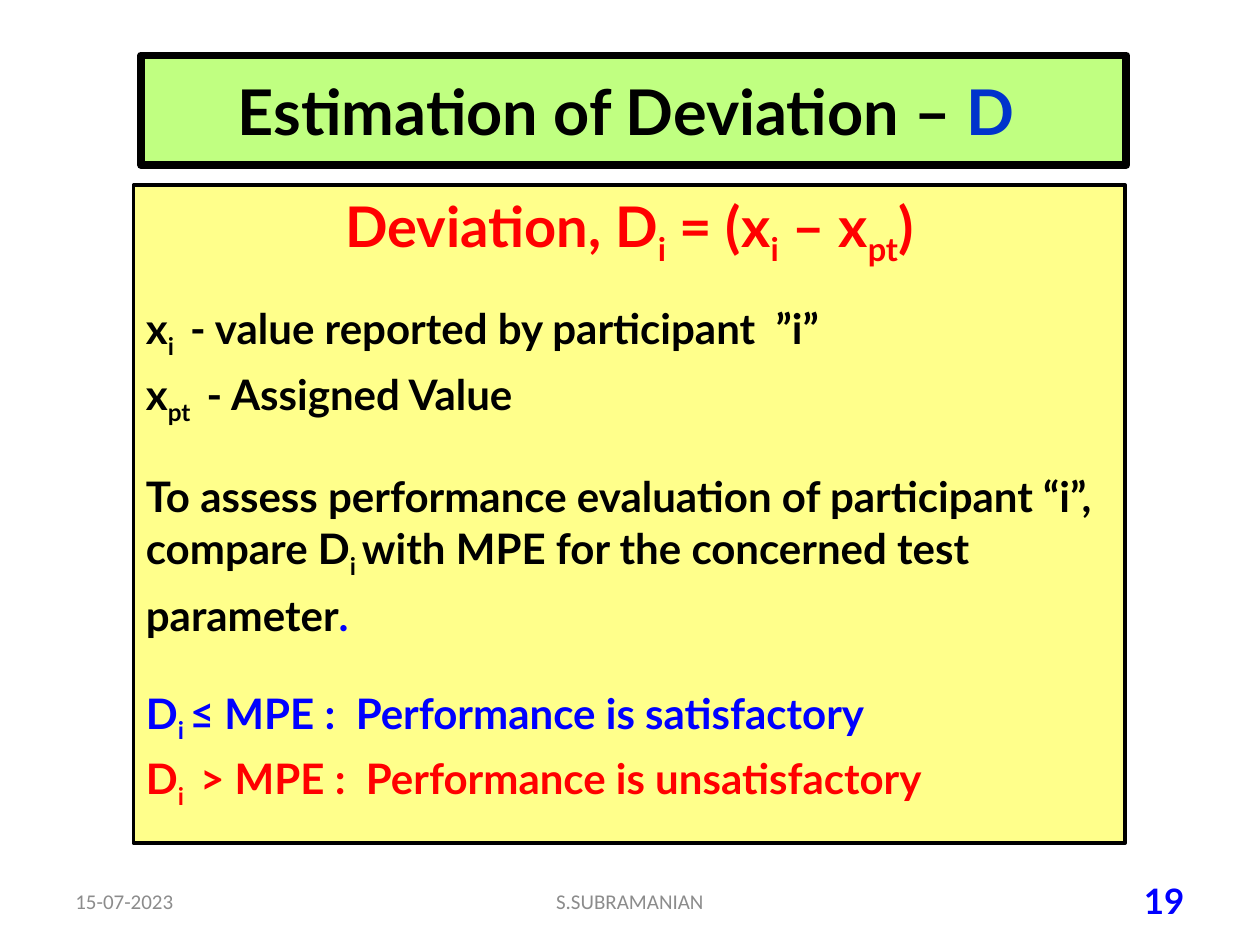
from pptx import Presentation
from pptx import util as u
from pptx.dml.color import RGBColor
from pptx.enum import shapes, text

HUES = {"ink": "000000", "lime": "C0FF81", "cream": "FFFF8B", "navy": "0033CC",
        "blue": "0000FF", "red": "FF0000", "grey": "8C8C8C"}
BOLD = {"name": "Lato", "bold": True}
SMALL = {"name": "Calibri", "bold": False, "size": u.Pt(12)}
LEFT, MID, RIGHT = text.PP_ALIGN.LEFT, text.PP_ALIGN.CENTER, text.PP_ALIGN.RIGHT


def hue(key):
    """Return the named colour."""
    return RGBColor.from_string(HUES[key])


def apply(item, form):
    """Set each attribute in form on item."""
    for key, value in form.items():
        setattr(item, key, value)


def place(shape, box):
    """Move and size a shape to a box in inches."""
    apply(shape, dict(zip(("left", "top", "width", "height"), map(u.Inches, box))))


def paint(shape, fill, width):
    """Give a shape a solid fill and a black outline."""
    shape.fill.solid()
    shape.fill.fore_color.rgb = hue(fill)
    shape.line.color.rgb = hue("ink")
    shape.line.width = u.Pt(width)


def write(par, parts, form):
    """Add runs of (words, colour, lowered) to a paragraph."""
    for words, tint, low in parts:
        run = par.add_run()
        run.text = words
        apply(run.font, form)
        run.font.color.rgb = hue(tint)
        if low:
            run.font._element.set("baseline", "-25000")


def mix(tint, *words):
    """Alternate normal and lowered words in one colour."""
    return [(word, tint, i % 2 == 1) for i, word in enumerate(words)]


def head(slide, box):
    """Place the framed title."""
    title = slide.shapes.title
    place(title, box)
    paint(title, "lime", 4.5)
    frame = title.text_frame
    apply(frame, {"vertical_anchor": text.MSO_ANCHOR.MIDDLE, "word_wrap": True,
                  "auto_size": text.MSO_AUTO_SIZE.NONE})
    par = frame.paragraphs[0]
    par.alignment = MID
    write(par, [("Estimation of Deviation – ", "ink", False), ("D ", "navy", False)],
          {**BOLD, "size": u.Pt(36)})


def body(slide, box):
    """Place the panel with the formula, its terms and the verdicts."""
    panel = slide.shapes.add_shape(shapes.MSO_SHAPE.RECTANGLE, *map(u.Inches, box))
    panel.shadow.inherit = False
    paint(panel, "cream", 2.25)
    frame = panel.text_frame
    apply(frame, {"vertical_anchor": text.MSO_ANCHOR.TOP, "word_wrap": True})
    rows = [
        (32, 0, MID, mix("red", "Deviation, D", "i", " = (x", "i", " – x", "pt", ")")),
        (24, 20, LEFT, mix("ink", "x", "i ", " - value reported by participant  ”i”")),
        (24, 4.8, LEFT, mix("ink", "x", "pt ", " - Assigned Value")),
        (24, 20, LEFT, mix(
            "ink", "To assess performance evaluation of participant “i”, compare D",
            "i ", "with MPE for the concerned test parameter") + mix("blue", ".")),
        (24, 27.2, LEFT, mix("blue", "D", "i ", "≤ MPE :  Performance is satisfactory")),
        (24, 4.8, LEFT, mix("red", "D", "i ", " > MPE :  Performance is unsatisfactory")),
    ]
    for i, (size, gap, align, parts) in enumerate(rows):
        par = frame.add_paragraph() if i else frame.paragraphs[0]
        apply(par, {"alignment": align, "space_before": u.Pt(gap)})
        write(par, parts, {**BOLD, "size": u.Pt(size)})
    frame.paragraphs[3].line_spacing = u.Pt(34)


def foot(slide, box):
    """Place the date, author and page number along a strip."""
    left, top, width, height = box
    side, mid = 2.33, 3.17
    items = [
        (left, side, LEFT, "15-07-2023", "grey", SMALL),
        (left + (width - mid) / 2, mid, MID, "S.SUBRAMANIAN", "grey", SMALL),
        (left + width - side, side, RIGHT, "19", "blue", {**BOLD, "size": u.Pt(20)}),
    ]
    for x, wide, align, words, tint, form in items:
        label = slide.shapes.add_textbox(*map(u.Inches, (x, top, wide, height)))
        frame = label.text_frame
        apply(frame, {"vertical_anchor": text.MSO_ANCHOR.MIDDLE, "word_wrap": True})
        frame.paragraphs[0].alignment = align
        write(frame.paragraphs[0], mix(tint, words), form)


def main():
    """Build and save the slide."""
    deck = Presentation()
    apply(deck, {"slide_width": u.Inches(10), "slide_height": u.Inches(7.5)})
    slide = deck.slides.add_slide(deck.slide_layouts[5])
    head(slide, (1.12, 0.44, 7.82, 0.87))
    body(slide, (1.06, 1.47, 7.87, 5.22))
    foot(slide, (0.5, 6.95, 9, 0.4))
    deck.save("out.pptx")


if __name__ == "__main__":
    main()
